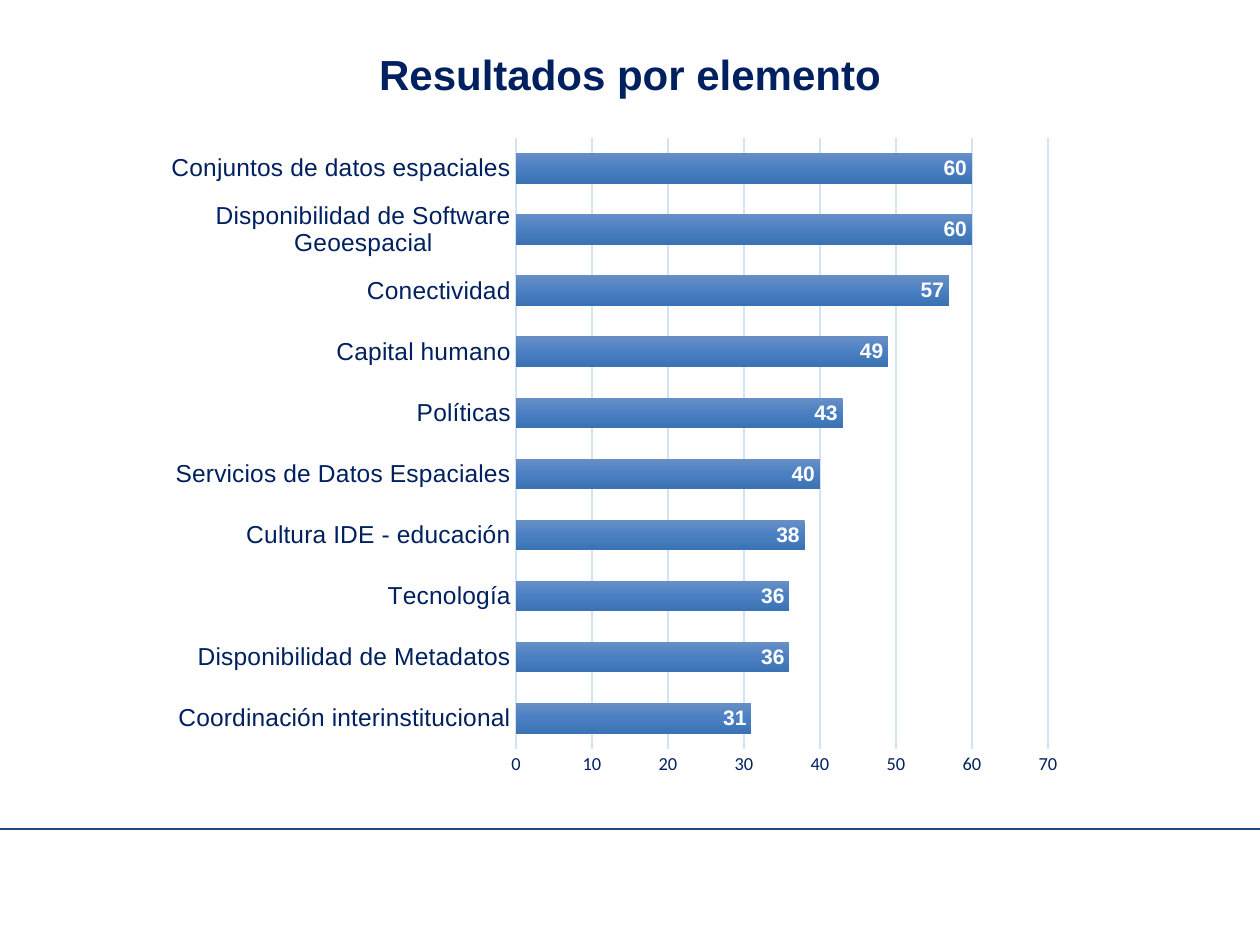
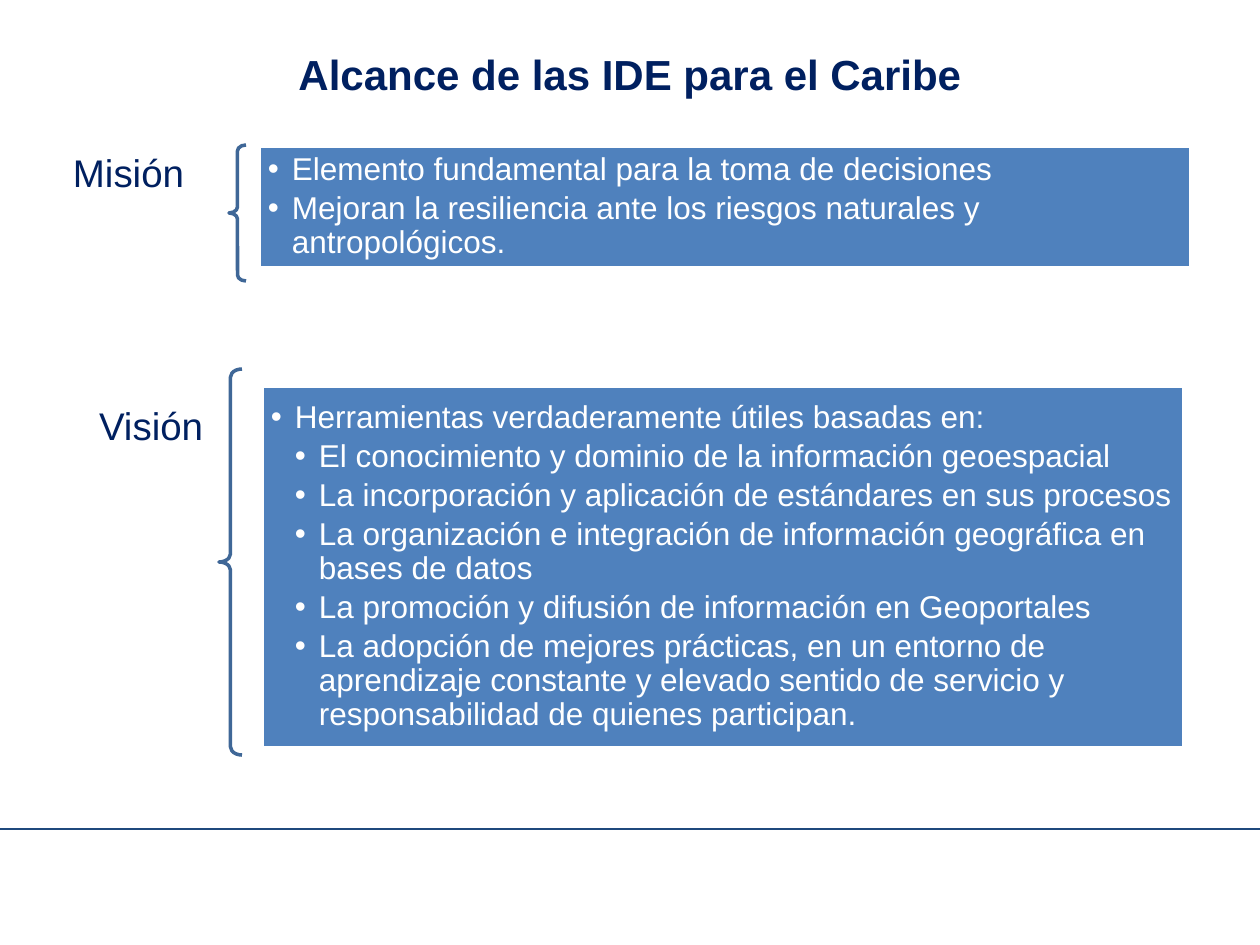
import pptx
import pptx.chart.data
import pptx.dml.color
import pptx.enum.chart
import pptx.enum.shapes
import pptx.enum.text
import pptx.oxml
import pptx.oxml.ns
import pptx.util
from lxml import etree

RGB = pptx.dml.color.RGBColor
Pt = pptx.util.Pt
qn = pptx.oxml.ns.qn
ALIGN = pptx.enum.text.PP_ALIGN
SHAPE = pptx.enum.shapes.MSO_SHAPE

NAVY = RGB(0x00, 0x20, 0x60)
WHITE = RGB(0xFF, 0xFF, 0xFF)
PANEL_BLUE = RGB(0x4F, 0x81, 0xBD)
BRACE_BLUE = RGB(0x3F, 0x67, 0x97)
FOOTER_BLUE = RGB(0x1F, 0x49, 0x7D)
GRID_BLUE = RGB(0xD4, 0xE3, 0xF4)
BAR_GRADIENT = [(0, RGB(0x68, 0x8F, 0xC5)), (50, RGB(0x4A, 0x80, 0xC3)),
                (100, RGB(0x3B, 0x72, 0xB3))]
FONT = "Arial"
AXIS_FONT = "Calibri"

PX_PER_INCH = 126
SLIDE_SIZE = (1260, 945)
TITLE_BOX = (63, 38, 1134, 77)
FOOTER_Y = 829
INDENT = 24

RESULTS_TITLE = "Resultados por elemento"
RESULTS = [
    ("Coordinación interinstitucional", 31),
    ("Disponibilidad de Metadatos", 36),
    ("Tecnología", 36),
    ("Cultura IDE - educación", 38),
    ("Servicios de Datos Espaciales", 40),
    ("Políticas", 43),
    ("Capital humano", 49),
    ("Conectividad", 57),
    ("Disponibilidad de Software Geoespacial", 60),
    ("Conjuntos de datos espaciales", 60),
]
CHART_BOX = (154, 125, 922, 665)
PLOT_BOX = (516, 138, 532, 611)

SCOPE_TITLE = "Alcance de las IDE para el Caribe"
SCOPE = [
    {"label": "Misión", "label_box": (44, 145, 161, 60),
     "brace_box": (229, 145, 17, 136), "panel_box": (259, 146, 932, 122),
     "points": [
         (1, "Elemento fundamental para la toma de decisiones"),
         (1, "Mejoran la resiliencia ante los riesgos naturales y antropológicos."),
     ]},
    {"label": "Visión", "label_box": (63, 398, 161, 60),
     "brace_box": (219, 369, 23, 386), "panel_box": (262, 386, 922, 362),
     "points": [
         (1, "Herramientas verdaderamente útiles basadas en:"),
         (2, "El conocimiento y dominio de la información geoespacial"),
         (2, "La incorporación y aplicación de estándares en sus procesos"),
         (2, "La organización e integración de información geográfica en bases de datos"),
         (2, "La promoción y difusión de información en Geoportales"),
         (2, "La adopción de mejores prácticas, en un entorno de aprendizaje constante "
             "y elevado sentido de servicio y responsabilidad de quienes participan."),
     ]},
]


def px(length):
    return round(length * 914400 / PX_PER_INCH)


def emu(box):
    return [px(length) for length in box]


def set_font(font, size, color, bold=False, name=FONT):
    font.name, font.size, font.bold = name, Pt(size), bold
    font.color.rgb = color


def add_run(paragraph, text, size, color, bold=False):
    run = paragraph.add_run()
    run.text = text
    set_font(run.font, size, color, bold)


def set_frame(frame, inset_x, inset_y):
    frame.word_wrap = True
    frame.vertical_anchor = pptx.enum.text.MSO_ANCHOR.MIDDLE
    frame.margin_left = frame.margin_right = px(inset_x)
    frame.margin_top = frame.margin_bottom = px(inset_y)


def add_label(slide, box, text, size, align, bold=False, inset=(13, 6)):
    frame = slide.shapes.add_textbox(*emu(box)).text_frame
    set_frame(frame, *inset)
    paragraph = frame.paragraphs[0]
    paragraph.alignment = align
    paragraph.line_spacing = 0.9
    add_run(paragraph, text, size, NAVY, bold)


def add_titled_slide(deck, title):
    """Add a slide with the shared footer rule and title."""
    slide = deck.slides.add_slide(deck.slide_layouts[6])
    rule = slide.shapes.add_connector(
        pptx.enum.shapes.MSO_CONNECTOR.STRAIGHT,
        *emu((0, FOOTER_Y, SLIDE_SIZE[0], FOOTER_Y)))
    rule.line.color.rgb = FOOTER_BLUE
    rule.line.width = Pt(0.75)
    etree.SubElement(rule._element.spPr, qn("a:effectLst"))
    add_label(slide, TITLE_BOX, title, 24, ALIGN.CENTER, bold=True)
    return slide


def fill_bars(series):
    """Give the bars their three-stop gradient, running from top to bottom."""
    fill = series.format.fill
    fill.gradient()
    fill.gradient_angle = 270
    stops = series._element.find(".//" + qn("a:gsLst"))
    for stop in list(stops):
        stops.remove(stop)
    for percent, color in BAR_GRADIENT:
        stop = etree.SubElement(stops, qn("a:gs"), pos=str(percent * 1000))
        etree.SubElement(stop, qn("a:srgbClr"), val=str(color))


def place_plot(chart):
    """Fix the inner plot area inside the chart frame."""
    left, top, width, height = CHART_BOX
    plot_left, plot_top, plot_width, plot_height = PLOT_BOX
    area = chart._chartSpace.find(".//" + qn("c:plotArea"))
    for old in area.findall(qn("c:layout")):
        area.remove(old)
    layout = etree.Element(qn("c:layout"))
    manual = etree.SubElement(layout, qn("c:manualLayout"))
    settings = [("layoutTarget", "inner"), ("xMode", "edge"), ("yMode", "edge"),
                ("x", (plot_left - left) / width), ("y", (plot_top - top) / height),
                ("w", plot_width / width), ("h", plot_height / height)]
    for tag, value in settings:
        etree.SubElement(manual, qn("c:" + tag), val=str(value))
    area.insert(0, layout)


def add_results_chart(slide):
    data = pptx.chart.data.CategoryChartData()
    data.categories = [name for name, _ in RESULTS]
    data.add_series("Series 1", [value for _, value in RESULTS])
    chart = slide.shapes.add_chart(
        pptx.enum.chart.XL_CHART_TYPE.BAR_CLUSTERED, *emu(CHART_BOX), data).chart
    chart.has_legend = chart.has_title = False
    set_font(chart.font, 10, NAVY, name=AXIS_FONT)
    place_plot(chart)

    elements, scores = chart.category_axis, chart.value_axis
    for axis in (elements, scores):
        axis.major_tick_mark = axis.minor_tick_mark = pptx.enum.chart.XL_TICK_MARK.NONE
    set_font(elements.tick_labels.font, 14, NAVY)
    set_font(scores.tick_labels.font, 10.5, NAVY, name=AXIS_FONT)
    scores.minimum_scale, scores.maximum_scale, scores.major_unit = 0, 70, 10
    scores.format.line.fill.background()
    for line in (elements.format.line, scores.major_gridlines.format.line):
        line.color.rgb = GRID_BLUE
        line.width = Pt(0.75)

    plot = chart.plots[0]
    plot.gap_width = 100
    plot.vary_by_categories = False
    fill_bars(plot.series[0])
    labels = plot.series[0].data_labels
    labels.show_value = True
    labels.position = pptx.enum.chart.XL_LABEL_POSITION.INSIDE_END
    set_font(labels.font, 12, WHITE, bold=True)


def add_outlined(slide, kind, box, color):
    shape = slide.shapes.add_shape(kind, *emu(box))
    shape.shadow.inherit = False
    shape.line.color.rgb = color
    shape.line.width = Pt(2)
    return shape


def add_point(paragraph, level, text):
    paragraph.alignment = ALIGN.LEFT
    paragraph.line_spacing = 0.9
    paragraph.space_after = Pt(2.8)
    properties = paragraph._p.get_or_add_pPr()
    properties.set("marL", str(px(INDENT * level)))
    properties.set("indent", str(px(-INDENT)))
    etree.SubElement(properties, qn("a:buFont"), typeface=FONT)
    etree.SubElement(properties, qn("a:buChar"), char="•")
    add_run(paragraph, text, 18, WHITE)


def add_scope(slide, scope):
    add_label(slide, scope["label_box"], scope["label"], 22, ALIGN.RIGHT, inset=(21, 8))

    brace = add_outlined(slide, SHAPE.LEFT_BRACE, scope["brace_box"], BRACE_BLUE)
    brace.fill.background()
    brace.adjustments[0], brace.adjustments[1] = 0.35, 0.5

    panel = add_outlined(slide, SHAPE.RECTANGLE, scope["panel_box"], WHITE)
    panel.fill.solid()
    panel.fill.fore_color.rgb = PANEL_BLUE
    frame = panel.text_frame
    set_frame(frame, 9, 9)
    for i, (level, text) in enumerate(scope["points"]):
        add_point(frame.add_paragraph() if i else frame.paragraphs[0], level, text)


def main():
    deck = pptx.Presentation()
    deck.slide_width, deck.slide_height = emu(SLIDE_SIZE)
    add_results_chart(add_titled_slide(deck, RESULTS_TITLE))
    scope_slide = add_titled_slide(deck, SCOPE_TITLE)
    for scope in SCOPE:
        add_scope(scope_slide, scope)
    deck.save("out.pptx")


if __name__ == "__main__":
    main()
